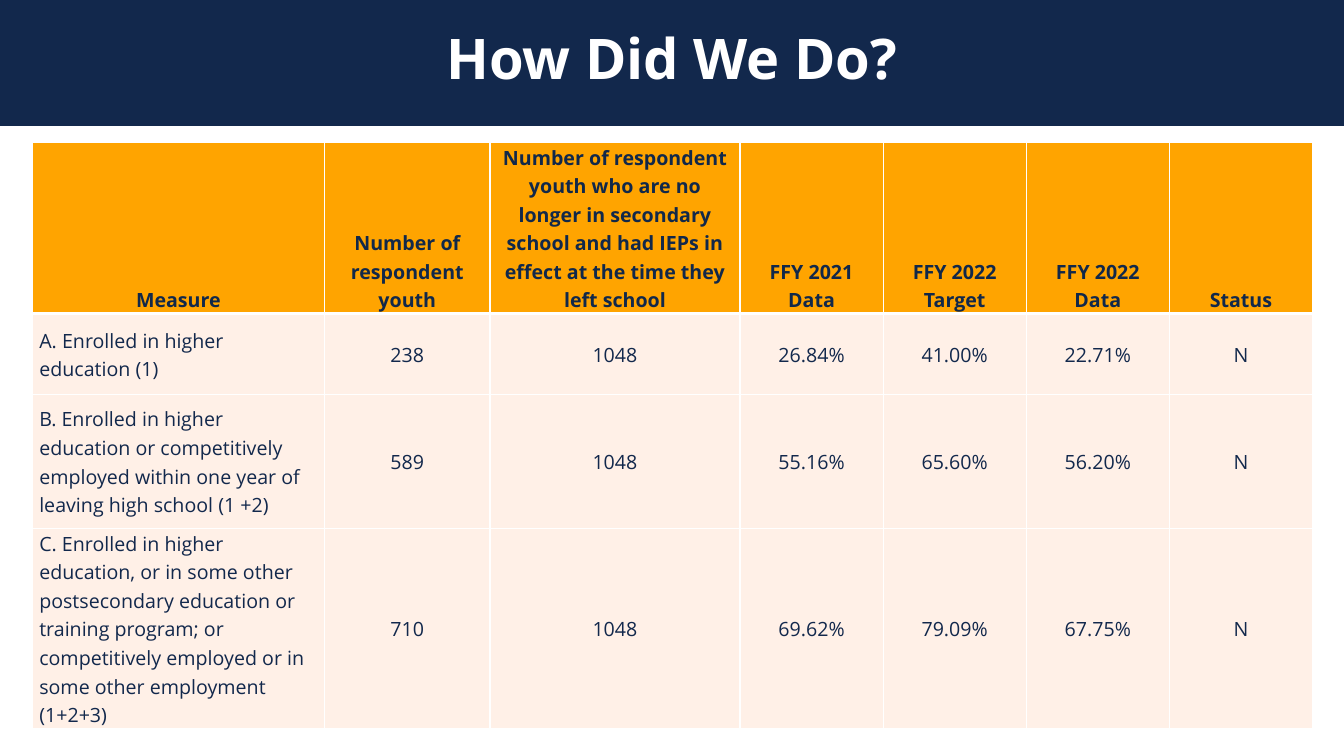
from lxml import etree
from pptx import Presentation
from pptx.dml.color import RGBColor
from pptx.enum.shapes import MSO_SHAPE
from pptx.enum.text import MSO_ANCHOR, PP_ALIGN
from pptx.oxml.ns import qn
from pptx.util import Inches, Pt

RECTANGLE = MSO_SHAPE.RECTANGLE
MIDDLE, BOTTOM = MSO_ANCHOR.MIDDLE, MSO_ANCHOR.BOTTOM
LEFT, CENTER = PP_ALIGN.LEFT, PP_ALIGN.CENTER

COLORS = {"navy": "12284C", "heading": "11284A", "orange": "FFA400",
          "cream": "FFF0E7", "white": "FFFFFF"}
FONT = "Open Sans"
PAGE_WIDTH, PAGE_HEIGHT = 13.33, 7.5
COLUMN_WIDTHS = [2.9, 1.64, 2.48] + [1.42] * 4
ROW_HEIGHTS = [1.33, 0.8, 1.33, 1.78]
THIN, THICK = 1, 3

RESULTS = [
    ["Measure", "Number of respondent youth",
     "Number of respondent youth who are no longer in secondary school "
     "and had IEPs in effect at the time they left school",
     "FFY 2021 Data", "FFY 2022 Target", "FFY 2022 Data", "Status"],
    ["A. Enrolled in higher education (1)",
     "238", "1048", "26.84%", "41.00%", "22.71%", "N"],
    ["B. Enrolled in higher education or competitively employed within "
     "one year of leaving high school (1 +2)",
     "589", "1048", "55.16%", "65.60%", "56.20%", "N"],
    ["C. Enrolled in higher education, or in some other postsecondary "
     "education or training program; or competitively employed or in "
     "some other employment (1+2+3)",
     "710", "1048", "69.62%", "79.09%", "67.75%", "N"],
]


def rgb(name):
    return RGBColor.from_string(COLORS[name])


def write_text(frame, text, size, color, bold, align, line_spacing):
    frame.text = text
    frame.word_wrap = True
    para = frame.paragraphs[0]
    para.alignment = align
    para.line_spacing = line_spacing
    span = para.runs[0]
    span.font.name = FONT
    span.font.size = Pt(size)
    span.font.bold = bold
    span.font.color.rgb = rgb(color)


def set_borders(cell, top, bottom):
    properties = cell._tc.get_or_add_tcPr()
    sides = {"a:lnL": THIN, "a:lnR": THIN, "a:lnT": top, "a:lnB": bottom}
    for index, (tag, width) in enumerate(sides.items()):
        line = etree.Element(qn(tag), w=str(Pt(width)))
        fill = etree.SubElement(line, qn("a:solidFill"))
        etree.SubElement(fill, qn("a:srgbClr"), val=COLORS["white"])
        properties.insert(index, line)


def add_title_band(page, left, top, width, height):
    band = page.shapes.add_shape(
        RECTANGLE, Inches(left), Inches(top), Inches(width), Inches(height))
    band.shadow.inherit = False
    band.fill.solid()
    band.fill.fore_color.rgb = rgb("navy")
    band.line.fill.background()
    frame = band.text_frame
    frame.vertical_anchor = MIDDLE
    frame.margin_left = frame.margin_right = Inches(0.07)
    frame.margin_top = frame.margin_bottom = Inches(0.04)
    write_text(frame, "How Did We Do?", 40, "white", True, CENTER, 0.9)


def format_cell(cell, text, row, column):
    header = row == 0
    cell.fill.solid()
    cell.fill.fore_color.rgb = rgb("orange" if header else "cream")
    cell.vertical_anchor = BOTTOM if header else MIDDLE
    cell.margin_left = cell.margin_right = Inches(0.07)
    cell.margin_top = cell.margin_bottom = 0
    align = LEFT if column == 0 and not header else CENTER
    write_text(cell.text_frame, text, 14, "heading" if header else "navy",
               header, align, 1.07)
    cell.text_frame.paragraphs[0].space_after = Pt(3)
    set_borders(cell, THICK if row == 1 else THIN, THICK if header else THIN)


def add_results_table(page, left, top):
    table = page.shapes.add_table(
        len(ROW_HEIGHTS), len(COLUMN_WIDTHS), Inches(left), Inches(top),
        Inches(sum(COLUMN_WIDTHS)), Inches(sum(ROW_HEIGHTS))).table
    for column, width in zip(table.columns, COLUMN_WIDTHS):
        column.width = Inches(width)
    for row, height in zip(table.rows, ROW_HEIGHTS):
        row.height = Inches(height)
    for row, texts in enumerate(RESULTS):
        for column, text in enumerate(texts):
            format_cell(table.cell(row, column), text, row, column)


def main():
    deck = Presentation()
    deck.slide_width = Inches(PAGE_WIDTH)
    deck.slide_height = Inches(PAGE_HEIGHT)
    page = deck.slides.add_slide(deck.slide_layouts[6])
    add_title_band(page, 0, -0.03, PAGE_WIDTH, 1.28)
    add_results_table(page, 0.32, 1.41)
    deck.save("out.pptx")


if __name__ == "__main__":
    main()
